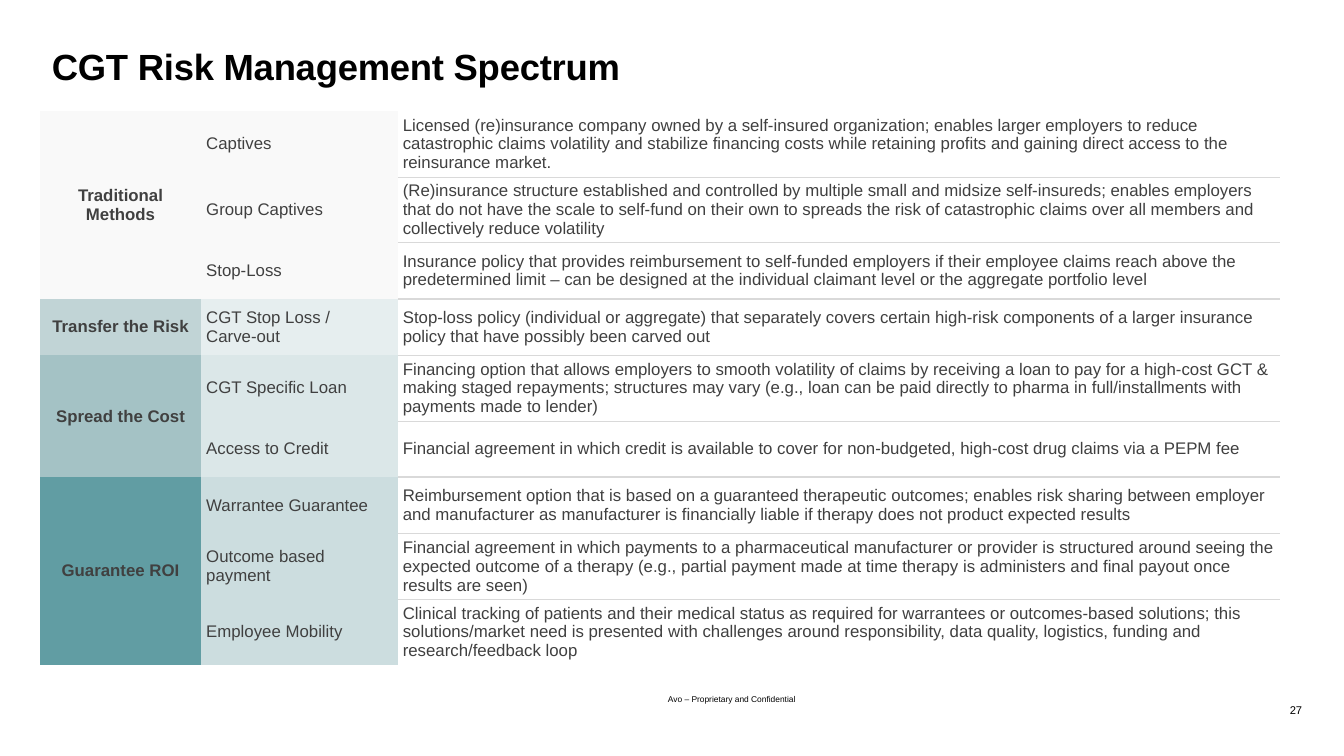
from dataclasses import dataclass

from lxml.etree import SubElement
from pptx import Presentation
from pptx.dml.color import RGBColor
from pptx.enum.text import MSO_ANCHOR, PP_ALIGN
from pptx.oxml.ns import qn
from pptx.util import Inches, Pt


@dataclass(frozen=True)
class Theme:
    font: str = "Arial"
    ink: str = "000000"
    body: str = "404040"
    rule: str = "D9D9D9"
    title_size: int = 52
    table_size: int = 24
    number_size: int = 16
    footer_size: int = 12
    thin: int = 1
    thick: int = 3


THEME = Theme()

GROUPS = [
    ("Traditional Methods", "F9F9F9", "F9F9F9", THEME.thick, [
        ("Captives",
         "Licensed (re)insurance company owned by a self-insured organization; enables larger "
         "employers to reduce catastrophic claims volatility and stabilize financing costs while "
         "retaining profits and gaining direct access to the reinsurance market."),
        ("Group Captives",
         "(Re)insurance structure established and controlled by multiple small and midsize "
         "self-insureds; enables employers that do not have the scale to self-fund on their own to "
         "spreads the risk of catastrophic claims over all members and collectively reduce volatility"),
        ("Stop-Loss",
         "Insurance policy that provides reimbursement to self-funded employers if their employee "
         "claims reach above the predetermined limit – can be designed at the individual claimant "
         "level or the aggregate portfolio level"),
    ]),
    ("Transfer the Risk", "C1D4D6", "E6EEEF", THEME.thin, [
        ("CGT Stop Loss /\nCarve-out",
         "Stop-loss policy (individual or aggregate) that separately covers certain high-risk "
         "components of a larger insurance policy that have possibly been carved out"),
    ]),
    ("Spread the Cost", "A4C2C5", "DBE7E8", THEME.thick, [
        ("CGT Specific Loan",
         "Financing option that allows employers to smooth volatility of claims by receiving a loan "
         "to pay for a high-cost GCT & making staged repayments; structures may vary (e.g., loan can "
         "be paid directly to pharma in full/installments with payments made to lender)"),
        ("Access to Credit",
         "Financial agreement in which credit is available to cover for non-budgeted, high-cost "
         "drug claims via a PEPM fee"),
    ]),
    ("Guarantee ROI", "619DA3", "CCDDDF", 0, [
        ("Warrantee Guarantee",
         "Reimbursement option that is based on a guaranteed therapeutic outcomes; enables risk "
         "sharing between employer and manufacturer as manufacturer is financially liable if therapy "
         "does not product expected results"),
        ("Outcome based payment",
         "Financial agreement in which payments to a pharmaceutical manufacturer or provider is "
         "structured around seeing the expected outcome of a therapy (e.g., partial payment made at "
         "time therapy is administers and final payout once results are seen)"),
        ("Employee Mobility",
         "Clinical tracking of patients and their medical status as required for warrantees or "
         "outcomes-based solutions; this solutions/market need is presented with challenges around "
         "responsibility, data quality, logistics, funding and research/feedback loop"),
    ]),
]


class SlideBuilder:
    def __init__(self, page, theme):
        self.page = page
        self.theme = theme

    def add_lines(self, frame, text, size, color, bold=False, align=PP_ALIGN.LEFT, spacing=None):
        for index, line in enumerate(text.split("\n")):
            para = frame.add_paragraph() if index else frame.paragraphs[0]
            para.alignment = align
            span = para.add_run()
            span.text = line
            span.font.name = self.theme.font
            span.font.size = Pt(size)
            span.font.bold = bold
            span.font.color.rgb = RGBColor.from_string(color)
            if spacing is not None:
                span._r.get_or_add_rPr().set("spc", str(spacing))

    def text(self, text, left, top, width, height, size, inset=True,
             anchor=MSO_ANCHOR.TOP, **style):
        box = self.page.shapes.add_textbox(Inches(left), Inches(top), Inches(width), Inches(height))
        frame = box.text_frame
        frame.word_wrap = True
        frame.vertical_anchor = anchor
        if not inset:
            frame.margin_left = frame.margin_right = frame.margin_top = frame.margin_bottom = 0
        self.add_lines(frame, text, size, self.theme.ink, **style)

    def borders(self, cell, top=0, bottom=0):
        properties = cell._tc.get_or_add_tcPr()
        weights = {"lnL": 0, "lnR": 0, "lnT": top, "lnB": bottom}
        for index, (side, weight) in enumerate(weights.items()):
            line = SubElement(properties, qn(f"a:{side}"), w=str(int(Pt(weight))))
            if weight:
                fill = SubElement(line, qn("a:solidFill"))
                SubElement(fill, qn("a:srgbClr"), val=self.theme.rule)
            else:
                SubElement(line, qn("a:noFill"))
            properties.insert(index, line)

    def cell(self, cell, text, fill=None, top=0, bottom=0, **style):
        cell.vertical_anchor = MSO_ANCHOR.MIDDLE
        if fill:
            cell.fill.solid()
            cell.fill.fore_color.rgb = RGBColor.from_string(fill)
        else:
            cell.fill.background()
        self.borders(cell, top, bottom)
        if text:
            self.add_lines(cell.text_frame, text, self.theme.table_size, self.theme.body, **style)

    def table(self, groups, left, top, widths, row_height):
        count = sum(len(methods) for *_, methods in groups)
        frame = self.page.shapes.add_table(count, len(widths), Inches(left), Inches(top),
                                           Inches(sum(widths)), Inches(row_height * count))
        table = frame.table
        table.first_row = table.horz_banding = False
        for column, width in zip(table.columns, widths):
            column.width = Inches(width)
        for table_row in table.rows:
            table_row.height = Inches(row_height)

        row = above = 0
        for name, dark, light, closing, methods in groups:
            first, last = row, row + len(methods) - 1
            for method, description in methods:
                below = closing if row == last else self.theme.thin
                self.cell(table.cell(row, 0), name if row == first else "", dark,
                          bold=True, align=PP_ALIGN.CENTER)
                self.cell(table.cell(row, 1), method, light)
                self.cell(table.cell(row, 2), description, top=above, bottom=below)
                above = below
                row += 1
            if last > first:
                table.cell(first, 0).merge(table.cell(last, 0))


def main():
    deck = Presentation()
    deck.slide_width, deck.slide_height = Inches(26.66), Inches(15)
    page = deck.slides.add_slide(deck.slide_layouts[6])
    builder = SlideBuilder(page, THEME)
    builder.text("27", 24.95, 13.69, 0.88, 0.8, THEME.number_size, inset=False,
                 anchor=MSO_ANCHOR.MIDDLE, align=PP_ALIGN.RIGHT)
    builder.text("CGT Risk Management Spectrum", 1.03, 0.87, 23.37, 0.88, THEME.title_size,
                 inset=False, bold=True, spacing=-30)
    builder.table(GROUPS, 0.79, 2.21, (3.2, 3.9, 17.5), 1.12)
    builder.text("Avo – Proprietary and Confidential", 13.15, 13.73, 11.02, 0.8, THEME.footer_size)
    deck.save("out.pptx")


if __name__ == "__main__":
    main()
